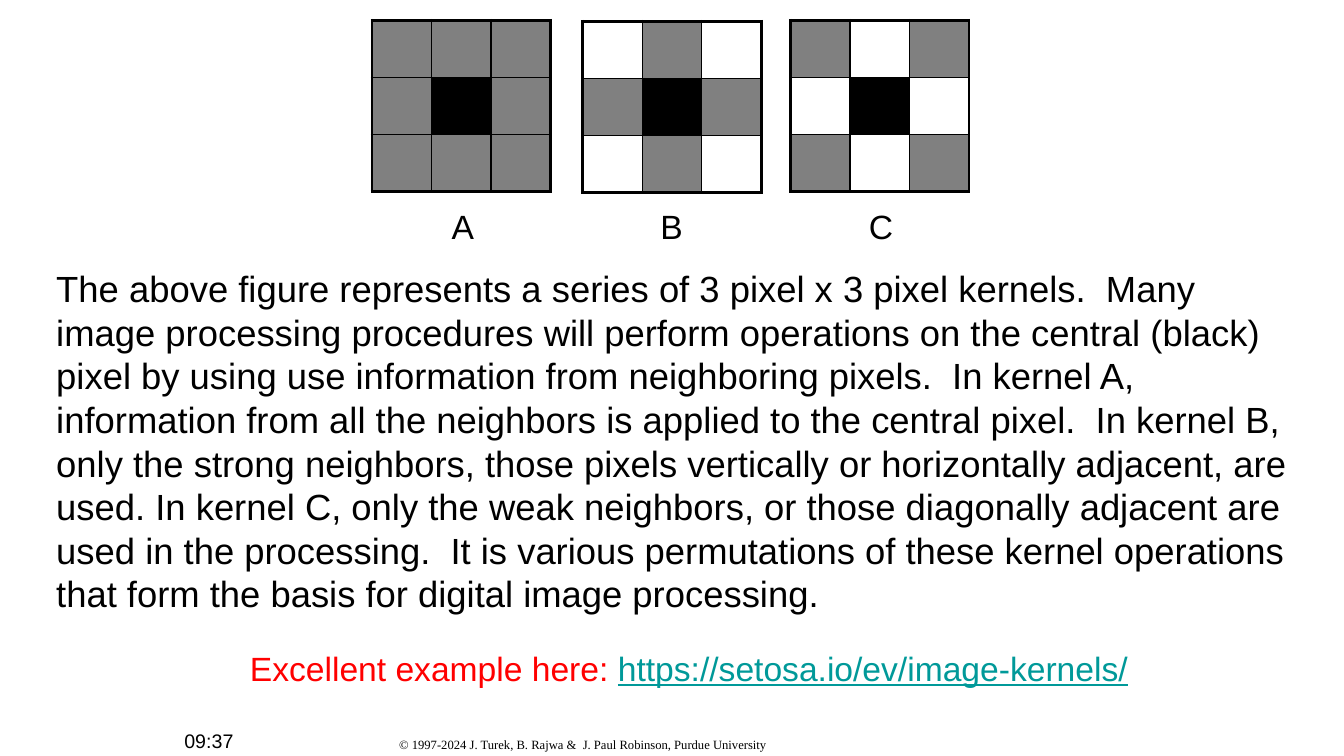
from lxml import etree
from pptx import Presentation
from pptx.dml.color import RGBColor
from pptx.enum.text import MSO_AUTO_SIZE
from pptx.oxml.ns import qn
from pptx.util import Inches, Pt

GROW = MSO_AUTO_SIZE.SHAPE_TO_FIT_TEXT
FIXED = MSO_AUTO_SIZE.NONE
BLACK, GRAY, RED, TEAL = "000000", "808080", "FF0000", "009999"
FILLS = {"g": GRAY, "k": BLACK, "w": None}
THICK, THIN = 2.25, 1
SIDE, TALL = 1.77, 1.7

KERNELS = [
    ("A", 3.69, 0.2, 4.38, 0.42, ("ggg", "gkg", "ggg")),
    ("B", 5.78, 0.21, 6.45, 0.42, ("wgw", "gkg", "wgw")),
    ("C", 7.84, 0.2, 8.52, 0.44, ("gwg", "wkw", "gwg")),
]

BODY = (
    "The above figure represents a series of 3 pixel x 3 pixel kernels.  "
    "Many image processing procedures will perform operations on the central "
    "(black) pixel by using use information from neighboring pixels.  "
    "In kernel A, information from all the neighbors is applied to the central "
    "pixel.  In kernel B, only the strong neighbors, those pixels vertically or "
    "horizontally adjacent, are used. In kernel C, only the weak neighbors, or "
    "those diagonally adjacent are used in the processing.  It is various "
    "permutations of these kernel operations that form the basis for digital "
    "image processing."
)


def color(text):
    return RGBColor.from_string(text)


class Page:
    def __init__(self, slide):
        self.slide = slide
        self.style = {"name": "Arial", "size": Pt(24)}

    def text(self, box, runs, wrap=False, fit=GROW, **style):
        frame = self.slide.shapes.add_textbox(*map(Inches, box)).text_frame
        frame.word_wrap = wrap
        frame.auto_size = fit
        for words, tint, extra in runs:
            run = frame.paragraphs[0].add_run()
            run.text = words
            run.font.color.rgb = color(tint)
            for key, value in {**self.style, **style, **extra}.items():
                setattr(run.font, key, value)

    def border(self, cell, widths):
        props = cell._tc.get_or_add_tcPr()
        for index, (side, width) in enumerate(widths.items()):
            line = etree.Element(qn(f"a:ln{side}"), w=str(Pt(width)))
            solid = etree.SubElement(line, qn("a:solidFill"))
            etree.SubElement(solid, qn("a:srgbClr"), val=BLACK)
            props.insert(index, line)

    def kernel(self, left, top, rows):
        count = len(rows)
        last = count - 1
        box = map(Inches, (left, top, SIDE, TALL))
        table = self.slide.shapes.add_table(count, count, *box).table
        table.first_row = table.horz_banding = False
        for r, row in enumerate(rows):
            for c, code in enumerate(row):
                cell = table.cell(r, c)
                if FILLS[code]:
                    cell.fill.solid()
                    cell.fill.fore_color.rgb = color(FILLS[code])
                else:
                    cell.fill.background()
                edges = {"L": c == 0, "R": c == last, "T": r == 0, "B": r == last}
                self.border(cell, {k: THICK if v else THIN for k, v in edges.items()})


def main():
    deck = Presentation()
    deck.slide_width, deck.slide_height = Inches(13.33), Inches(7.5)
    page = Page(deck.slides.add_slide(deck.slide_layouts[6]))
    page.text(
        (3.86, 7.26, 3.89, 0.25),
        [("© 1997-2024 J. Turek, B. Rajwa &  J. Paul Robinson, Purdue University", BLACK, {})],
        name="Times New Roman", size=Pt(9),
    )
    page.text((1.73, 7.18, 1.51, 0.32), [("09:37", BLACK, {})], True, FIXED, size=Pt(14))
    page.text((0.46, 2.59, 12.43, 3.6), [(BODY, BLACK, {})], True, size=Pt(26))
    for name, left, top, mark, width, rows in KERNELS:
        page.kernel(left, top, rows)
        page.text((mark, 1.99, width, 0.5), [(name, BLACK, {})])
    page.text(
        (2.38, 6.38, 9.09, 0.5),
        [
            ("Excellent example here: ", RED, {}),
            ("https://setosa.io/ev/image-kernels/", TEAL, {"underline": True}),
        ],
    )
    deck.save("out.pptx")


if __name__ == "__main__":
    main()
